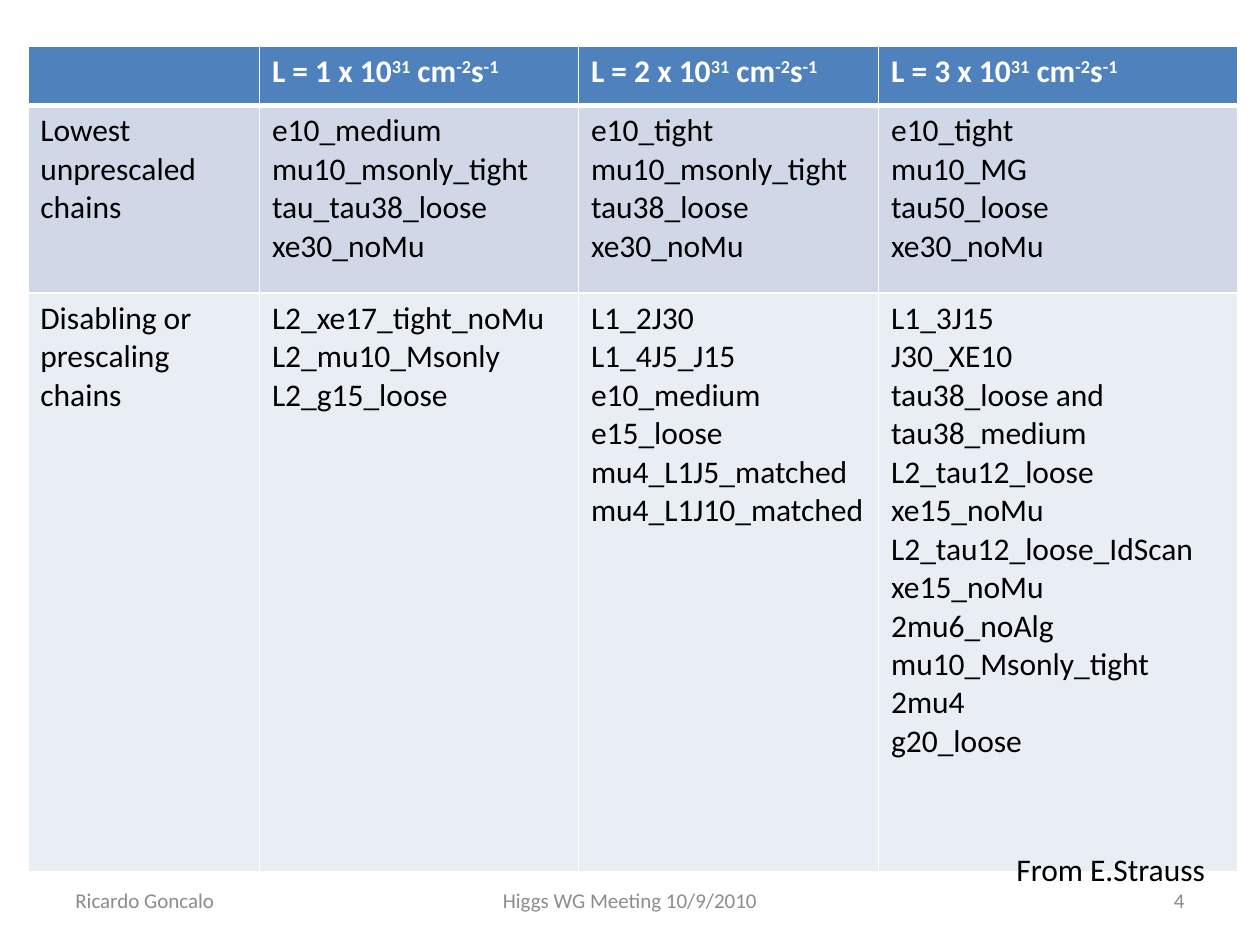
import pptx
import pptx.util
import pptx.dml.color
import pptx.enum.text
import lxml.etree
from pptx.util import Cm

COLORS = {
    "header": "4F81BD",
    "band_dark": "D0D8E8",
    "band_light": "E9EDF4",
    "white": "FFFFFF",
    "text": "000000",
    "footer": "8C8C8C",
}
ALIGN = pptx.enum.text.PP_ALIGN
ANCHOR = pptx.enum.text.MSO_ANCHOR
A = "{http://schemas.openxmlformats.org/drawingml/2006/main}"

COLUMNS = [4.67, 6.43, 6.05, 7.24]
ROWS = [1.19, 3.78, 11.66]
BODY = [
    [
        ["Lowest unprescaled chains"],
        ["e10_medium", "mu10_msonly_tight", "tau_tau38_loose", "xe30_noMu"],
        ["e10_tight mu10_msonly_tight", "tau38_loose", "xe30_noMu"],
        ["e10_tight", "mu10_MG", "tau50_loose", "xe30_noMu"],
    ],
    [
        ["Disabling or prescaling chains"],
        ["L2_xe17_tight_noMu", "L2_mu10_Msonly", "L2_g15_loose"],
        ["L1_2J30", "L1_4J5_J15", "e10_medium", "e15_loose",
         "mu4_L1J5_matched mu4_L1J10_matched"],
        ["L1_3J15", "J30_XE10", "tau38_loose and tau38_medium",
         "L2_tau12_loose xe15_noMu L2_tau12_loose_IdScan", "xe15_noMu",
         "2mu6_noAlg", "mu10_Msonly_tight", "2mu4", "g20_loose"],
    ],
]


class Deck:
    font = "Calibri"
    size = 18

    def __init__(self, width, height):
        self.prs = pptx.Presentation()
        self.prs.slide_width, self.prs.slide_height = Cm(width), Cm(height)
        self.s = self.prs.slides.add_slide(self.prs.slide_layouts[6])

    def rgb(self, name):
        return pptx.dml.color.RGBColor.from_string(COLORS[name])

    def format(self, tf, color, size=None, bold=False, align=ALIGN.LEFT):
        for p in tf.paragraphs:
            p.alignment = align
            for r in p.runs:
                r.font.name = self.font
                r.font.size = pptx.util.Pt(size or self.size)
                r.font.bold = bold
                r.font.color.rgb = self.rgb(color)

    def text(self, text, box, color="text", size=None, align=ALIGN.LEFT,
             anchor=ANCHOR.TOP):
        tf = self.s.shapes.add_textbox(*map(Cm, box)).text_frame
        tf.word_wrap = True
        tf.vertical_anchor = anchor
        tf.text = text
        self.format(tf, color, size, align=align)

    def table(self, left, top, columns, rows):
        sp = self.s.shapes.add_table(len(rows), len(columns), Cm(left), Cm(top),
                                     Cm(sum(columns)), Cm(sum(rows)))
        for column, width in zip(sp.table.columns, columns):
            column.width = Cm(width)
        for row, height in zip(sp.table.rows, rows):
            row.height = Cm(height)
        return sp.table

    def cell(self, cell, fill, top=1, bottom=1):
        cell.fill.solid()
        cell.fill.fore_color.rgb = self.rgb(fill)
        tc_pr = cell._tc.get_or_add_tcPr()
        for i, (side, width) in enumerate(zip("LRTB", (1, 1, top, bottom))):
            ln = lxml.etree.Element(f"{A}ln{side}", w=str(pptx.util.Pt(width)))
            solid = lxml.etree.SubElement(ln, f"{A}solidFill")
            lxml.etree.SubElement(solid, f"{A}srgbClr", val=COLORS["white"])
            tc_pr.insert(i, ln)

    def luminosity(self, tf, value):
        parts = [f"L = {value} x 10", "31", " cm", "-2", "s", "-1"]
        for i, part in enumerate(parts):
            r = tf.paragraphs[0].add_run()
            r.text = part
            if i % 2:
                r._r.get_or_add_rPr().set("baseline", "30000")
        self.format(tf, "white", bold=True)


def main():
    deck = Deck(25.4, 19.05)
    table = deck.table(0.56, 0.94, COLUMNS, ROWS)
    for i in range(len(COLUMNS)):
        cell = table.cell(0, i)
        deck.cell(cell, "header", bottom=3)
        if i:
            deck.luminosity(cell.text_frame, i)
    for i, (row, fill) in enumerate(zip(BODY, ("band_dark", "band_light")), 1):
        for j, chains in enumerate(row):
            cell = table.cell(i, j)
            deck.cell(cell, fill, top=3 if i == 1 else 1)
            cell.text_frame.text = "\n".join(chains)
            deck.format(cell.text_frame, "text")

    for text, left, width, align in [
        ("Ricardo Goncalo", 1.27, 5.93, ALIGN.LEFT),
        ("Higgs WG Meeting 10/9/2010", 8.68, 8.04, ALIGN.CENTER),
        ("4", 18.2, 5.93, ALIGN.RIGHT),
    ]:
        deck.text(text, (left, 17.65, width, 1.01), "footer", 12, align,
                  ANCHOR.MIDDLE)
    deck.text("From E.Strauss", (20.24, 17.02, 5.16, 1.03))
    deck.prs.save("out.pptx")


if __name__ == "__main__":
    main()
